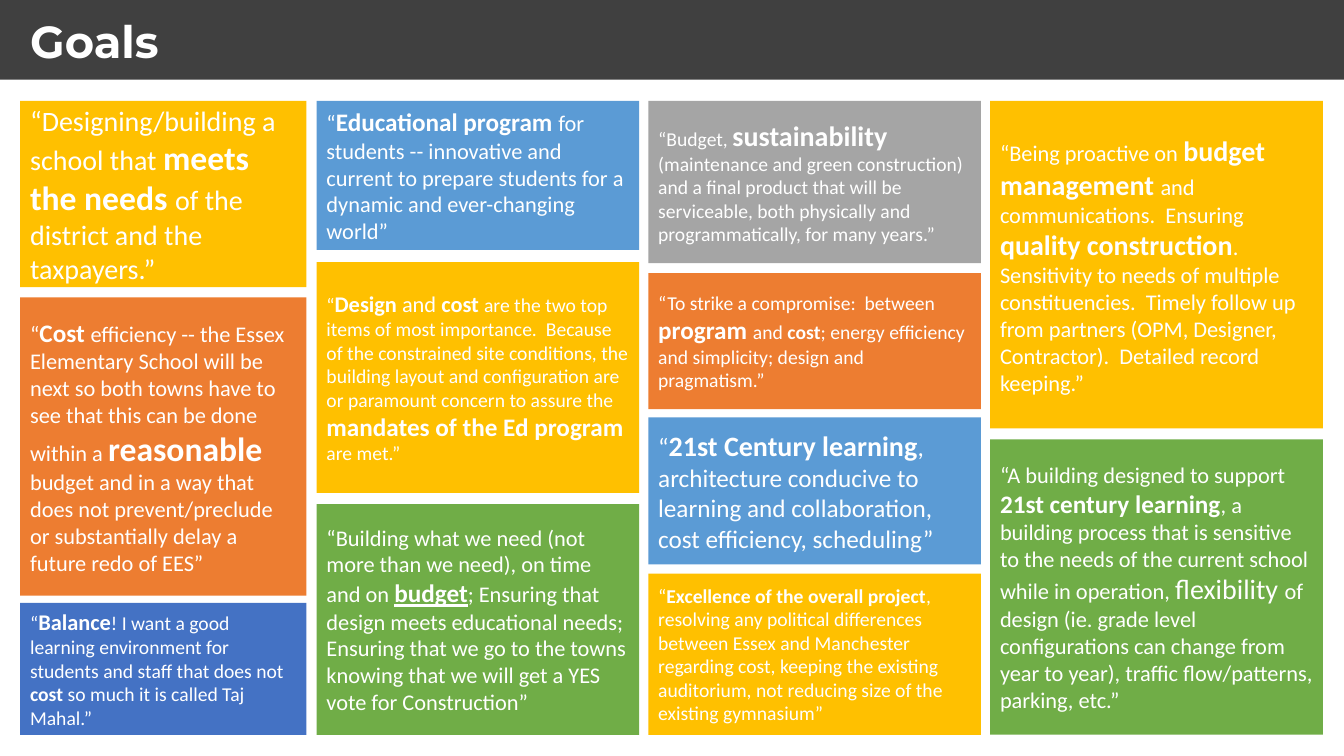
from dataclasses import dataclass

from pptx import Presentation
from pptx import util as u
from pptx.dml.color import RGBColor
from pptx.enum import shapes, text

PX = 9144  # EMU per px, 100 px to the inch
SLIDE_W, SLIDE_H, BAR_H = 1333, 750, 79
COLOURS = {
    "white": "FFFFFF",
    "bar": "404040",
    "blue": "4472C4",
    "sky": "5B9BD5",
    "gold": "FFC000",
    "orange": "ED7D31",
    "green": "70AD47",
    "grey": "A5A5A5",
}


@dataclass(frozen=True)
class Run:
    text: str
    size: int
    bold: bool = False
    underline: bool = False


@dataclass(frozen=True)
class Quote:
    top: int
    height: int
    colour: str
    runs: list[Run]


@dataclass(frozen=True)
class Column:
    left: int
    width: int
    quotes: list[Quote]


COLUMNS = [
    Column(20, 284, [
        Quote(100, 185, "gold", [
            Run("“Designing/building a school that ", 20),
            Run("meets the needs ", 24, bold=True),
            Run("of the district and the taxpayers.”", 20),
        ]),
        Quote(295, 296, "orange", [
            Run("“", 16),
            Run("Cost ", 18, bold=True),
            Run("efficiency -- the Essex Elementary School will be next so both towns "
                "have to  see that this can be done within a ", 16),
            Run("reasonable ", 24, bold=True),
            Run("budget and in a way that does not prevent/preclude or substantially "
                "delay a future redo of EES”", 16),
        ]),
        Quote(598, 131, "blue", [
            Run("“", 14),
            Run("Balance", 16, bold=True),
            Run("! I want a good learning environment for students and staff that "
                "does not ", 14),
            Run("cost", 14, bold=True),
            Run(" so much it is called Taj Mahal.”", 14),
        ]),
    ]),
    Column(314, 320, [
        Quote(100, 148, "sky", [
            Run("“", 16),
            Run("Educational program ", 18, bold=True),
            Run("for students -- innovative and current to prepare students for a "
                "dynamic and ever-changing world”", 16),
        ]),
        Quote(260, 229, "gold", [
            Run("“", 14),
            Run("Design", 16, bold=True),
            Run(" and ", 16),
            Run("cost ", 16, bold=True),
            Run("are the two top items of most importance.  Because of the constrained "
                "site conditions, the building layout and configuration are or "
                "paramount concern to assure the ", 14),
            Run("mandates of the Ed program ", 18, bold=True),
            Run("are met.”", 14),
        ]),
        Quote(500, 229, "green", [
            Run("“Building what we need (not more than we need), on time and on ", 16),
            Run("budget", 18, bold=True, underline=True),
            Run("; Ensuring that design meets educational needs; Ensuring that we go "
                "to the towns knowing that we will get a YES vote for Construction”", 16),
        ]),
    ]),
    Column(643, 330, [
        Quote(100, 161, "grey", [
            Run("“Budget, ", 14),
            Run("sustainability ", 20, bold=True),
            Run("(maintenance and green construction) and a final product that will be "
                "serviceable, both physically and programmatically, for many years.”", 14),
        ]),
        Quote(271, 135, "orange", [
            Run("“To strike a compromise:  between ", 14),
            Run("program ", 18, bold=True),
            Run("and ", 14),
            Run("cost", 14, bold=True),
            Run("; energy efficiency and simplicity; design and pragmatism.”", 14),
        ]),
        Quote(414, 146, "sky", [
            Run("“", 18),
            Run("21st Century learning", 20, bold=True),
            Run(", architecture conducive to learning and collaboration,  cost "
                "efficiency, scheduling”", 18),
        ]),
        Quote(569, 160, "gold", [
            Run("“", 14),
            Run("Excellence of the overall project", 14, bold=True),
            Run(", resolving any political differences between Essex and Manchester "
                "regarding cost, keeping the existing auditorium, not reducing size of "
                "the existing gymnasium”", 14),
        ]),
    ]),
    Column(982, 330, [
        Quote(100, 325, "gold", [
            Run("“Being proactive on ", 16),
            Run("budget management ", 20, bold=True),
            Run("and communications.  Ensuring ", 16),
            Run("quality construction", 20, bold=True),
            Run(".  Sensitivity to needs of multiple constituencies.  Timely follow up "
                "from partners (OPM, Designer, Contractor).  Detailed record keeping.”", 16),
        ]),
        Quote(436, 293, "green", [
            Run("“A building designed to support ", 16),
            Run("21st century learning", 18, bold=True),
            Run(", a building process that is sensitive to the needs of the current "
                "school while in operation, ", 16),
            Run("flexibility ", 20),
            Run("of design (ie. grade level configurations can change from year to "
                "year), traffic flow/patterns, parking, etc.”", 16),
        ]),
    ]),
]


def rgb(name: str) -> RGBColor:
    return RGBColor.from_string(COLOURS[name])


def add_box(s, left: int, top: int, width: int, height: int, colour: str):
    """Add a flat rectangle without outline or shadow."""
    sp = s.shapes.add_shape(shapes.MSO_SHAPE.RECTANGLE,
                            left * PX, top * PX, width * PX, height * PX)
    sp.shadow.inherit = False
    sp.fill.solid()
    sp.fill.fore_color.rgb = rgb(colour)
    sp.line.fill.background()
    return sp


def format_paragraph(p, font: str) -> None:
    p.alignment = text.PP_ALIGN.LEFT
    p.font.name = font
    p.font.color.rgb = rgb("white")


def add_quote(s, column: Column, quote: Quote) -> None:
    sp = add_box(s, column.left, quote.top, column.width, quote.height, quote.colour)
    tf = sp.text_frame
    tf.word_wrap = True
    tf.vertical_anchor = text.MSO_ANCHOR.MIDDLE
    p = tf.paragraphs[0]
    format_paragraph(p, "Calibri")
    for run in quote.runs:
        r = p.add_run()
        r.text = run.text
        r.font.size = u.Pt(run.size)
        r.font.bold = run.bold
        r.font.underline = run.underline


def add_title(s, title: str) -> None:
    bar = add_box(s, 0, 0, SLIDE_W, BAR_H, "bar")
    sp = s.shapes.title
    sp.element.addprevious(bar.element)  # the bar lies behind the title
    sp.left, sp.top, sp.width, sp.height = 0, PX, SLIDE_W * PX, (BAR_H - 1) * PX
    tf = sp.text_frame
    tf.text = title
    tf.word_wrap = True
    tf.auto_size = text.MSO_AUTO_SIZE.NONE
    tf.vertical_anchor = text.MSO_ANCHOR.MIDDLE
    tf.margin_left = tf.margin_right = 30 * PX
    tf.margin_top = tf.margin_bottom = 10 * PX
    p = tf.paragraphs[0]
    format_paragraph(p, "Montserrat")
    p.font.size = u.Pt(32)
    p.font.bold = True


def main() -> None:
    prs = Presentation()
    prs.slide_width, prs.slide_height = SLIDE_W * PX, SLIDE_H * PX
    s = prs.slides.add_slide(prs.slide_layouts.get_by_name("Title Only"))
    add_title(s, "Goals")
    for column in COLUMNS:
        for quote in column.quotes:
            add_quote(s, column, quote)
    prs.save("out.pptx")


if __name__ == "__main__":
    main()
